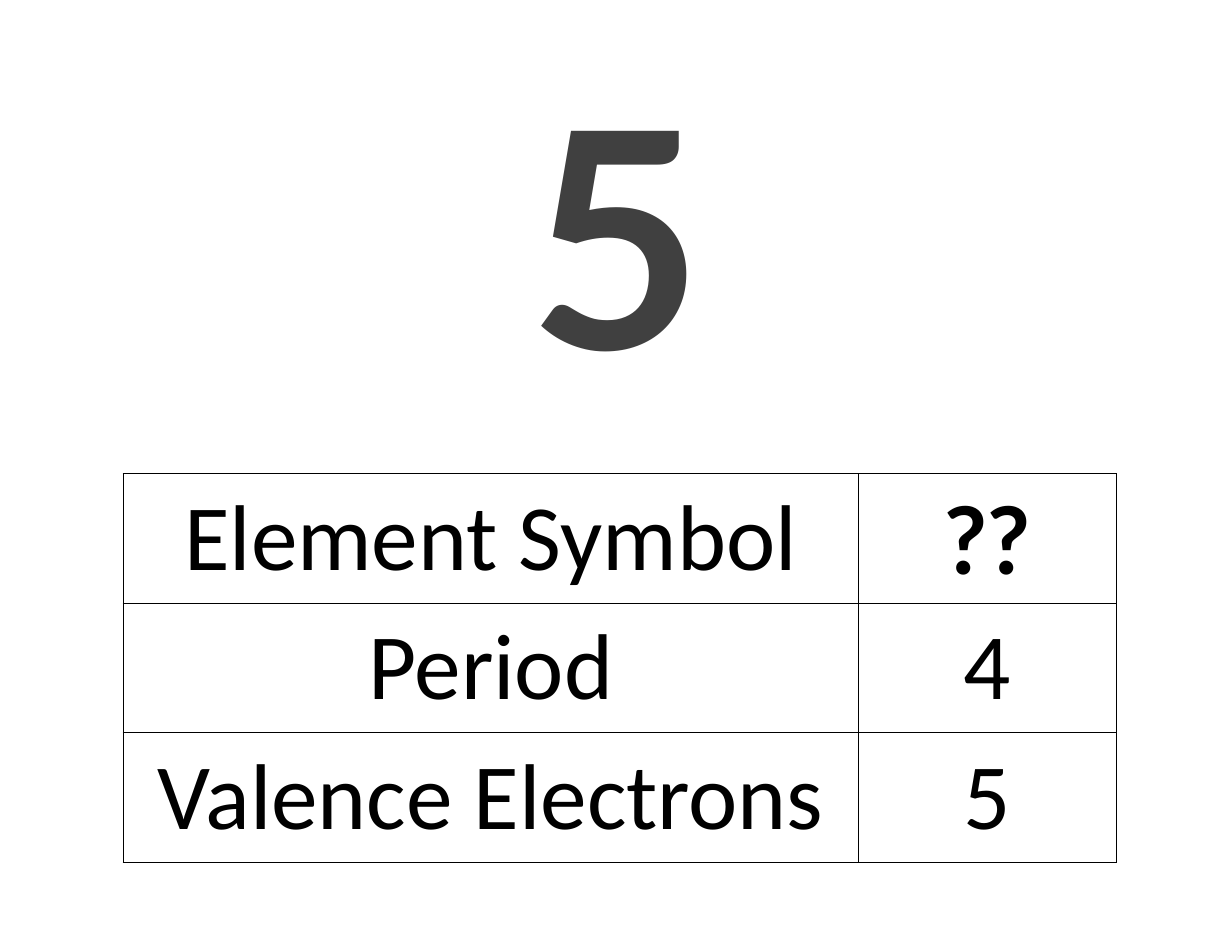
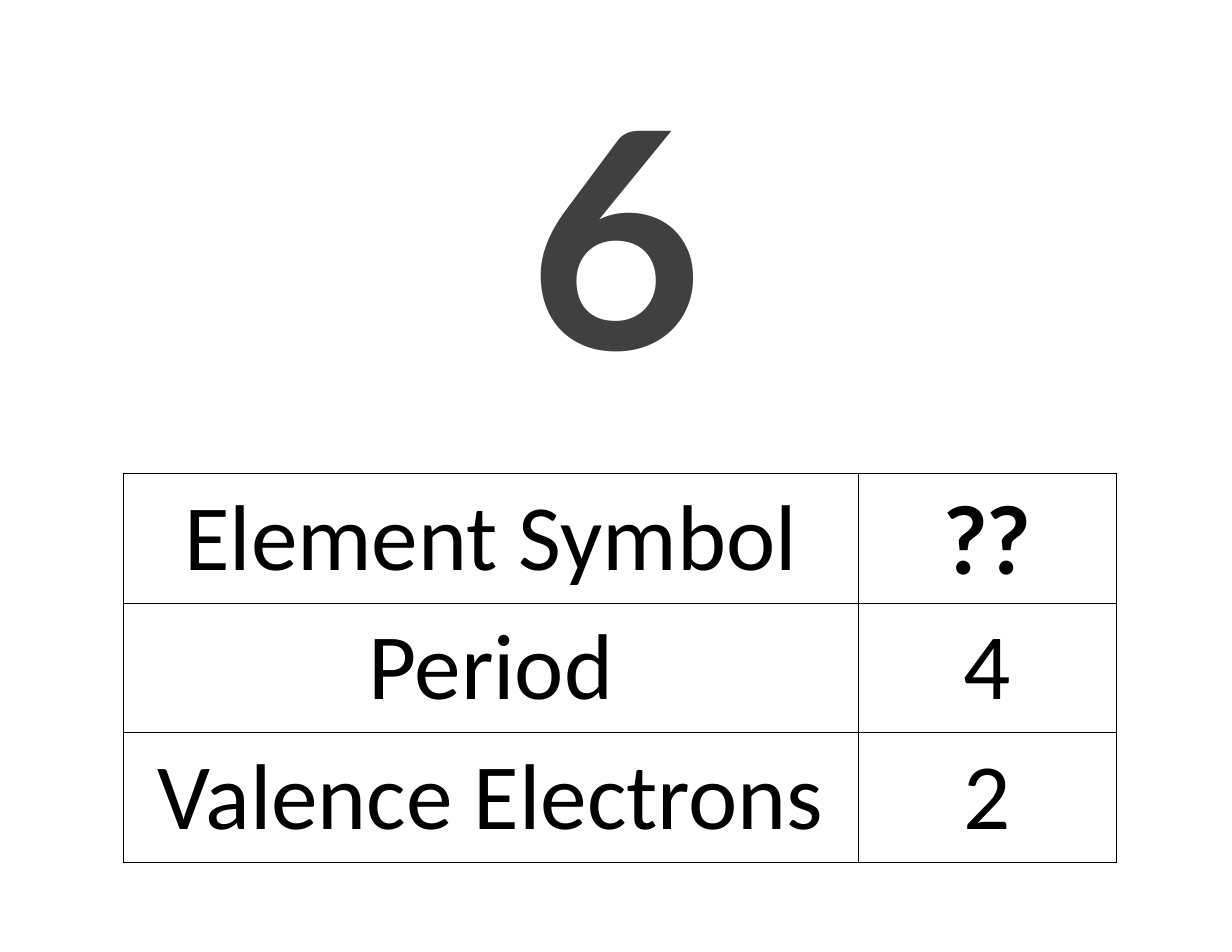
from lxml import etree
from pptx import Presentation
from pptx.dml.color import RGBColor
from pptx.enum.text import MSO_ANCHOR, PP_ALIGN
from pptx.oxml.ns import qn
from pptx.util import Inches, Pt

BLACK = RGBColor(0x00, 0x00, 0x00)
DARK_GRAY = RGBColor(0x40, 0x40, 0x40)
BODY_FONT = "Calibri"
DISPLAY_FONT = "Lato"

SLIDE_W, SLIDE_H = 11, 8.5
NUMBER_BOX = (0, 0.76, SLIDE_W, 2.98)
TABLE_BOX = (1.1, 4.23, 8.87, 3.47)
LABEL_SHARE = 0.74  # part of the table width taken by the labels

# card number, period, valence electrons
CARDS = [("5", "4", "5"), ("6", "4", "2")]


def style_text(tf, font, size, color, bold=False):
    p = tf.paragraphs[0]
    p.alignment = PP_ALIGN.CENTER
    for r in p.runs:
        r.font.name = font
        r.font.size = Pt(size)
        r.font.bold = bold
        r.font.color.rgb = color


def add_borders(cell, color, width):
    tc_pr = cell._tc.get_or_add_tcPr()
    for i, side in enumerate(("lnL", "lnR", "lnT", "lnB")):
        ln = etree.Element(qn(f"a:{side}"), w=str(Pt(width)))
        fill = etree.SubElement(ln, qn("a:solidFill"))
        etree.SubElement(fill, qn("a:srgbClr"), val=str(color))
        tc_pr.insert(i, ln)


def add_card_number(slide, box, number):
    sp = slide.shapes.add_textbox(*map(Inches, box))
    tf = sp.text_frame
    tf.word_wrap = True
    tf.vertical_anchor = MSO_ANCHOR.MIDDLE
    tf.text = number
    tf.paragraphs[0].line_spacing = 0.9
    style_text(tf, DISPLAY_FONT, 194, DARK_GRAY, bold=True)


def add_clue_table(slide, box, period, electrons):
    rows = [
        ("Element Symbol", "??"),
        ("Period", period),
        ("Valence Electrons", electrons),
    ]
    width, height = box[2:]
    table = slide.shapes.add_table(len(rows), 2, *map(Inches, box)).table
    table.first_row = False
    table.horz_banding = False
    table.columns[0].width = Inches(width * LABEL_SHARE)
    table.columns[1].width = Inches(width * (1 - LABEL_SHARE))
    for i, texts in enumerate(rows):
        table.rows[i].height = Inches(height / len(rows))
        for j, text in enumerate(texts):
            cell = table.cell(i, j)
            cell.fill.background()
            cell.vertical_anchor = MSO_ANCHOR.MIDDLE
            cell.text_frame.text = text
            unknown = text == "??"
            font = DISPLAY_FONT if unknown else BODY_FONT
            style_text(cell.text_frame, font, 60, BLACK, bold=unknown)
            add_borders(cell, BLACK, 1)


def add_card(prs, number, period, electrons):
    slide = prs.slides.add_slide(prs.slide_layouts[6])
    add_card_number(slide, NUMBER_BOX, number)
    add_clue_table(slide, TABLE_BOX, period, electrons)


def main():
    prs = Presentation()
    prs.slide_width = Inches(SLIDE_W)
    prs.slide_height = Inches(SLIDE_H)
    for card in CARDS:
        add_card(prs, *card)
    prs.save("out.pptx")


if __name__ == "__main__":
    main()
